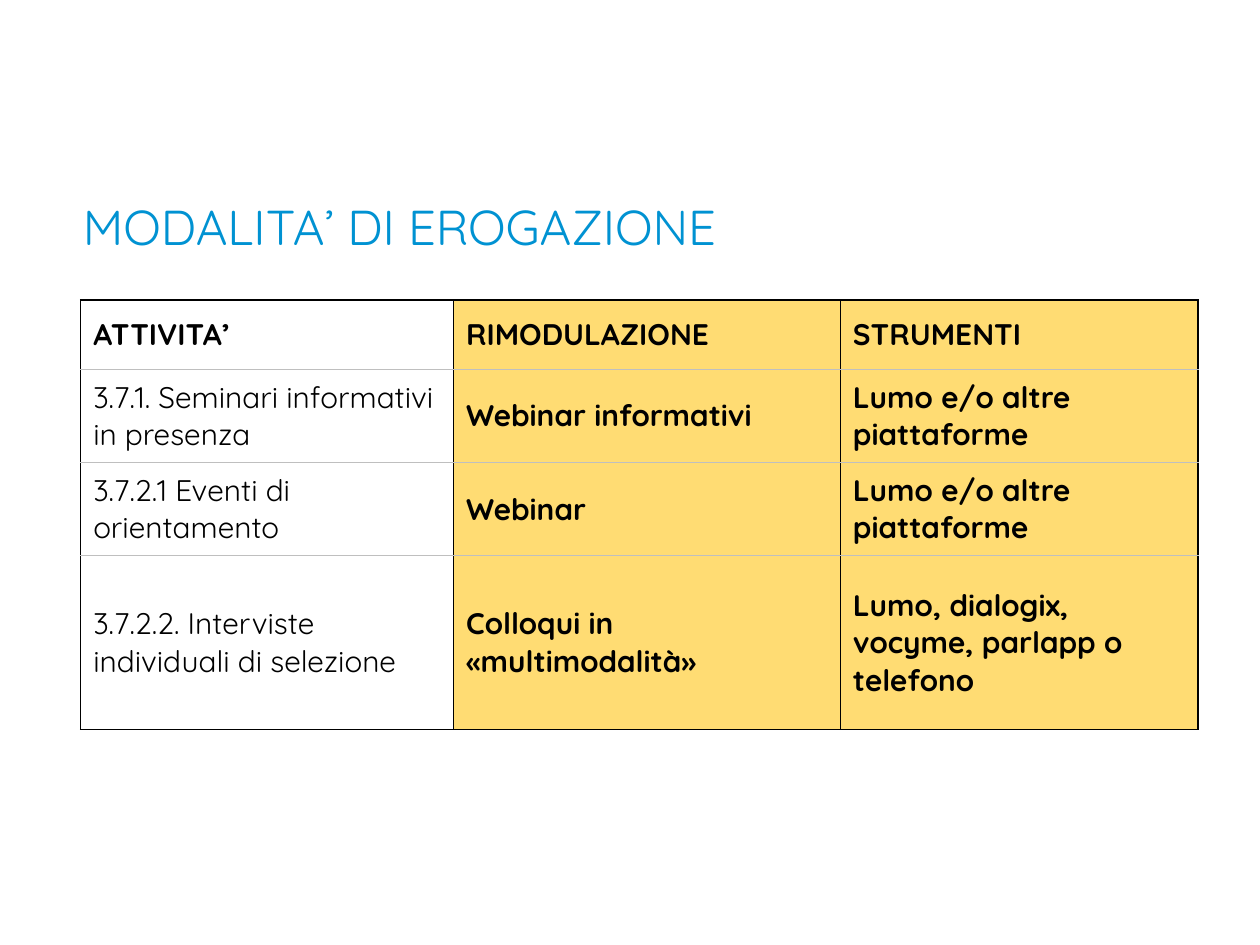
from lxml.etree import SubElement
from pptx import Presentation
from pptx.dml.color import RGBColor
from pptx.enum.text import MSO_ANCHOR
from pptx.oxml import parse_xml
from pptx.oxml.ns import nsdecls, qn
from pptx.util import Inches, Pt

FONT = "Quicksand"
BLUE = RGBColor(0x00, 0x92, 0xD2)
BLACK = RGBColor(0x00, 0x00, 0x00)
GREY = RGBColor(0xBF, 0xBF, 0xBF)
AMBER = RGBColor(0xFF, 0xC0, 0x00)
AMBER_OPACITY = 55

COLUMN_WIDTHS = [2.96, 3.07, 2.84]
ROW_HEIGHTS = [0.55, 0.74, 0.74, 1.38]
ACTIVITIES = [
    ["ATTIVITA’", "RIMODULAZIONE", "STRUMENTI"],
    ["3.7.1. Seminari informativi in presenza", "Webinar informativi",
     "Lumo e/o altre piattaforme"],
    ["3.7.2.1 Eventi di orientamento", "Webinar",
     "Lumo e/o altre piattaforme"],
    ["3.7.2.2. Interviste individuali di selezione",
     "Colloqui in «multimodalità»",
     "Lumo, dialogix, vocyme, parlapp o telefono"],
]


def add_span(para, text, size, color, bold=False):
    span = para.add_run()
    span.text = text
    span.font.name = FONT
    span.font.size = Pt(size)
    span.font.bold = bold
    span.font.color.rgb = color


def add_title(page, text):
    box = page.shapes.add_textbox(Inches(0.56), Inches(1.51),
                                  Inches(6.05), Inches(0.57))
    box.text_frame.word_wrap = True
    add_span(box.text_frame.paragraphs[0], text, 28, BLUE)


def set_borders(cell, top, bottom):
    """Black sides, with the given colours above and below."""
    sides = [("lnL", BLACK), ("lnR", BLACK), ("lnT", top), ("lnB", bottom)]
    properties = cell._tc.get_or_add_tcPr()
    for position, (tag, color) in enumerate(sides):
        width = Pt(1) if color == BLACK else Pt(0.75)
        # Border lines must come before the fill
        properties.insert(position, parse_xml(
            f'<a:{tag} {nsdecls("a")} w="{width}"><a:solidFill>'
            f'<a:srgbClr val="{color}"/></a:solidFill></a:{tag}>'))


def fill_amber(cell):
    cell.fill.solid()
    cell.fill.fore_color.rgb = AMBER
    color = cell._tc.tcPr.find(qn("a:solidFill")).find(qn("a:srgbClr"))
    SubElement(color, qn("a:alpha")).set("val", str(AMBER_OPACITY * 1000))


def add_activity_table(page):
    last_row = len(ROW_HEIGHTS) - 1
    frame = page.shapes.add_table(
        len(ROW_HEIGHTS), len(COLUMN_WIDTHS), Inches(0.64), Inches(2.38),
        Inches(sum(COLUMN_WIDTHS)), Inches(sum(ROW_HEIGHTS)))
    table = frame.table
    table.horz_banding = False
    table.first_row = False
    for column, width in zip(table.columns, COLUMN_WIDTHS):
        column.width = Inches(width)
    for row, height in zip(table.rows, ROW_HEIGHTS):
        row.height = Inches(height)

    for r, texts in enumerate(ACTIVITIES):
        for c, text in enumerate(texts):
            cell = table.cell(r, c)
            cell.vertical_anchor = MSO_ANCHOR.MIDDLE
            # The new arrangements stand out from the plain first column
            if c > 0:
                fill_amber(cell)
            else:
                cell.fill.background()
            set_borders(cell, BLACK if r == 0 else GREY,
                        BLACK if r == last_row else GREY)
            add_span(cell.text_frame.paragraphs[0], text, 17, BLACK,
                     bold=r == 0 or c > 0)


def main():
    deck = Presentation()
    deck.slide_width, deck.slide_height = Inches(10), Inches(7.5)
    page = deck.slides.add_slide(deck.slide_layouts[6])
    add_activity_table(page)
    add_title(page, "MODALITA’ DI EROGAZIONE")
    deck.save("out.pptx")


if __name__ == "__main__":
    main()
